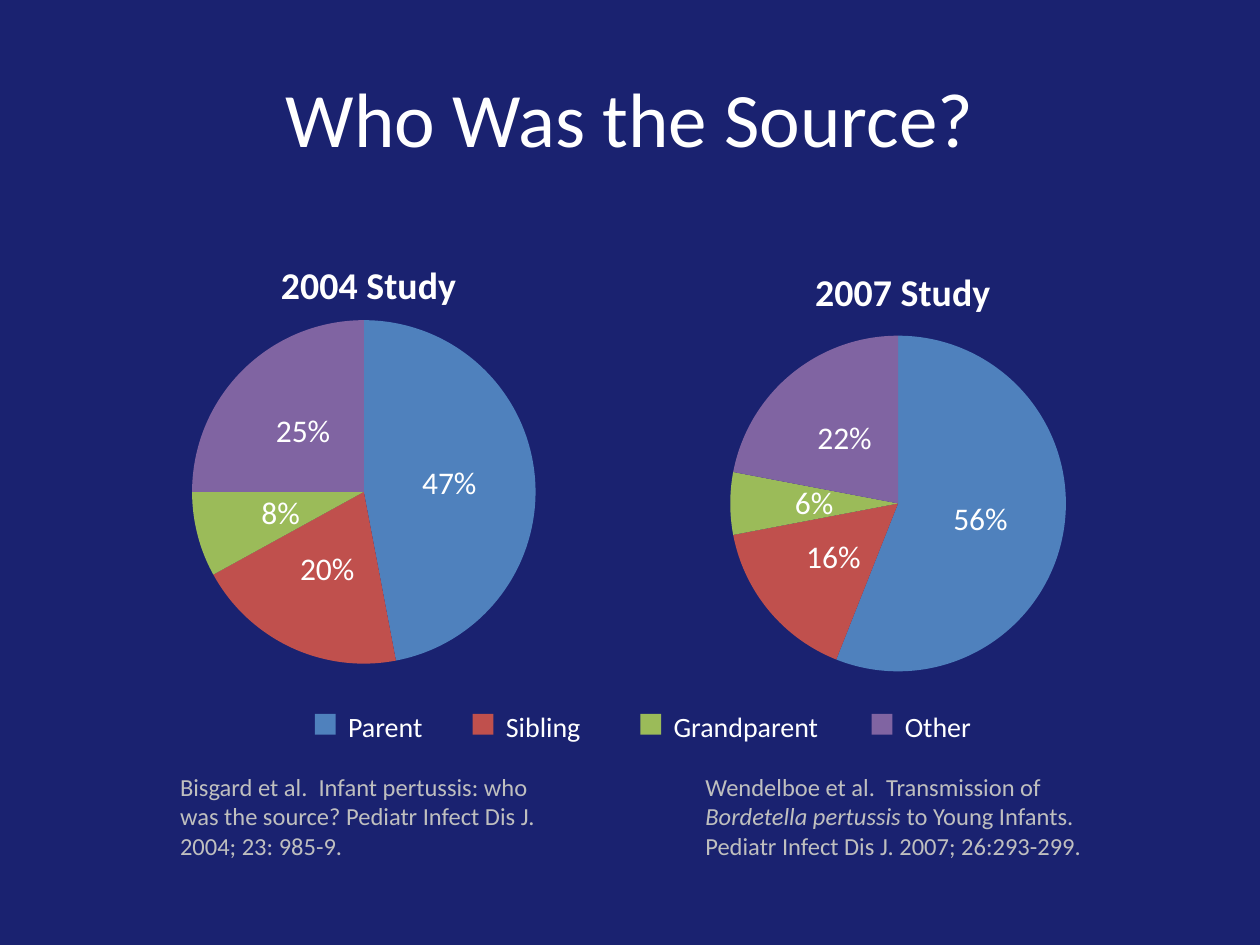
from dataclasses import dataclass

from lxml.etree import SubElement
from pptx import Presentation
from pptx.chart.data import CategoryChartData
from pptx.dml.color import RGBColor
from pptx.enum.chart import XL_CHART_TYPE, XL_LABEL_POSITION
from pptx.enum.shapes import MSO_SHAPE
from pptx.enum.text import MSO_ANCHOR, PP_ALIGN
from pptx.oxml.ns import qn
from pptx.util import Cm, Pt


@dataclass(frozen=True)
class Theme:
    font: str = "Calibri"
    background: RGBColor = RGBColor(0x1A, 0x22, 0x70)
    text: RGBColor = RGBColor(0xFF, 0xFF, 0xFF)
    citation: RGBColor = RGBColor(0xBF, 0xBF, 0xBF)
    parent: RGBColor = RGBColor(0x4F, 0x81, 0xBD)
    sibling: RGBColor = RGBColor(0xC0, 0x50, 0x4D)
    grandparent: RGBColor = RGBColor(0x9B, 0xBB, 0x59)
    other: RGBColor = RGBColor(0x80, 0x64, 0xA2)
    title_size: Pt = Pt(44)
    study_size: Pt = Pt(21.6)
    label_size: Pt = Pt(18)
    legend_size: Pt = Pt(16)
    citation_size: Pt = Pt(14)


theme = Theme()


def add_text(shapes, box, runs, size, color):
    textbox = shapes.add_textbox(*map(Cm, box))
    frame = textbox.text_frame
    frame.word_wrap = True
    paragraph = frame.paragraphs[0]
    for words, italic in runs:
        run = paragraph.add_run()
        run.text = words
        if italic:
            run.font.italic = True
    paragraph.font.name = theme.font
    paragraph.font.size = size
    paragraph.font.color.rgb = color
    return frame


def set_layout(parent, index, settings):
    for old in parent.findall(qn("c:layout")):
        parent.remove(old)
    layout = SubElement(parent, qn("c:layout"))
    manual = SubElement(layout, qn("c:manualLayout"))
    for tag, value in settings.items():
        SubElement(manual, qn(f"c:{tag}")).set("val", str(value))
    parent.insert(index, layout)


prs = Presentation()
prs.slide_width, prs.slide_height = Cm(25.4), Cm(19.05)
slide = prs.slides.add_slide(prs.slide_layouts[6])
slide.background.fill.solid()
slide.background.fill.fore_color.rgb = theme.background

heading = add_text(slide.shapes, (1.27, 0.76, 22.86, 3.18),
                   [("Who Was the Source?", False)], theme.title_size, theme.text)
heading.vertical_anchor = MSO_ANCHOR.MIDDLE
heading.paragraphs[0].alignment = PP_ALIGN.CENTER

source_colors = (theme.parent, theme.sibling, theme.grandparent, theme.other)
studies = [
    ("2004 Study", "Series 1", (47, 20, 8, 25), 3.4, 4.6, 0.05, (0.06, 0.2, 0.88, 0.76)),
    ("2007 Study", "2007 Study", (56, 16, 6, 22), 14.17, 4.65, 0.06, (0.07, 0.23, 0.86, 0.74)),
]
for study, series_name, shares, left, top, title_y, pie_area in studies:
    study_data = CategoryChartData()
    study_data.categories = ["1", "2", "3", "4"]
    study_data.add_series(series_name, shares)
    chart = slide.shapes.add_chart(XL_CHART_TYPE.PIE, Cm(left), Cm(top),
                                   Cm(7.87), Cm(9.17), study_data).chart
    chart.has_legend = False
    chart.font.name = theme.font
    chart.font.size = theme.label_size
    chart.font.color.rgb = theme.text

    chart.has_title = True
    study_title = chart.chart_title.text_frame.paragraphs[0]
    study_title.text = study
    study_title.font.name = theme.font
    study_title.font.size = theme.study_size
    study_title.font.bold = True
    study_title.font.color.rgb = theme.text
    set_layout(chart.chart_title._element, 1,
               {"xMode": "edge", "yMode": "edge", "x": 0.27, "y": title_y})
    set_layout(chart._chartSpace.chart.plotArea, 0,
               {"layoutTarget": "inner", "xMode": "edge", "yMode": "edge",
                **dict(zip("xywh", pie_area))})

    pie = chart.plots[0]
    pie.vary_by_categories = True
    for index, color in enumerate(source_colors):
        slice_fill = pie.series[0].points[index].format.fill
        slice_fill.solid()
        slice_fill.fore_color.rgb = color
    pie.has_data_labels = True
    labels = pie.data_labels
    labels.show_value = False
    labels.show_percentage = True
    labels.number_format = "0%"
    labels.number_format_is_linked = False
    labels.position = XL_LABEL_POSITION.CENTER
    labels.font.name = theme.font
    labels.font.size = theme.label_size
    labels.font.color.rgb = theme.text

legend = slide.shapes.add_group_shape()
swatch_side = 0.42
legend_entries = [("Parent", 6.35, 2.33), ("Sibling", 9.53, 2.33),
                  ("Grandparent", 12.91, 4.23), ("Other", 17.57, 2.33)]
for (source, left, width), color in zip(legend_entries, source_colors):
    swatch = legend.shapes.add_shape(MSO_SHAPE.RECTANGLE, Cm(left), Cm(14.39),
                                     Cm(swatch_side), Cm(swatch_side))
    swatch.shadow.inherit = False
    swatch.fill.solid()
    swatch.fill.fore_color.rgb = color
    swatch.line.fill.background()
    add_text(legend.shapes, (left + swatch_side, 14.18, width, 0.94),
             [(source, False)], theme.legend_size, theme.text)

citations = [
    (3.38, 8.05, [("Bisgard et al.  Infant pertussis: who was the source? "
                   "Pediatr Infect Dis J.  2004; 23: 985-9.", False)]),
    (13.97, 8.74, [("Wendelboe et al.  Transmission of ", False),
                   ("Bordetella pertussis ", True),
                   ("to Young Infants.  Pediatr Infect Dis J. 2007; 26:293-299.", False)]),
]
for left, width, runs in citations:
    add_text(slide.shapes, (left, 15.44, width, 2.06), runs,
             theme.citation_size, theme.citation)

prs.save("out.pptx")
